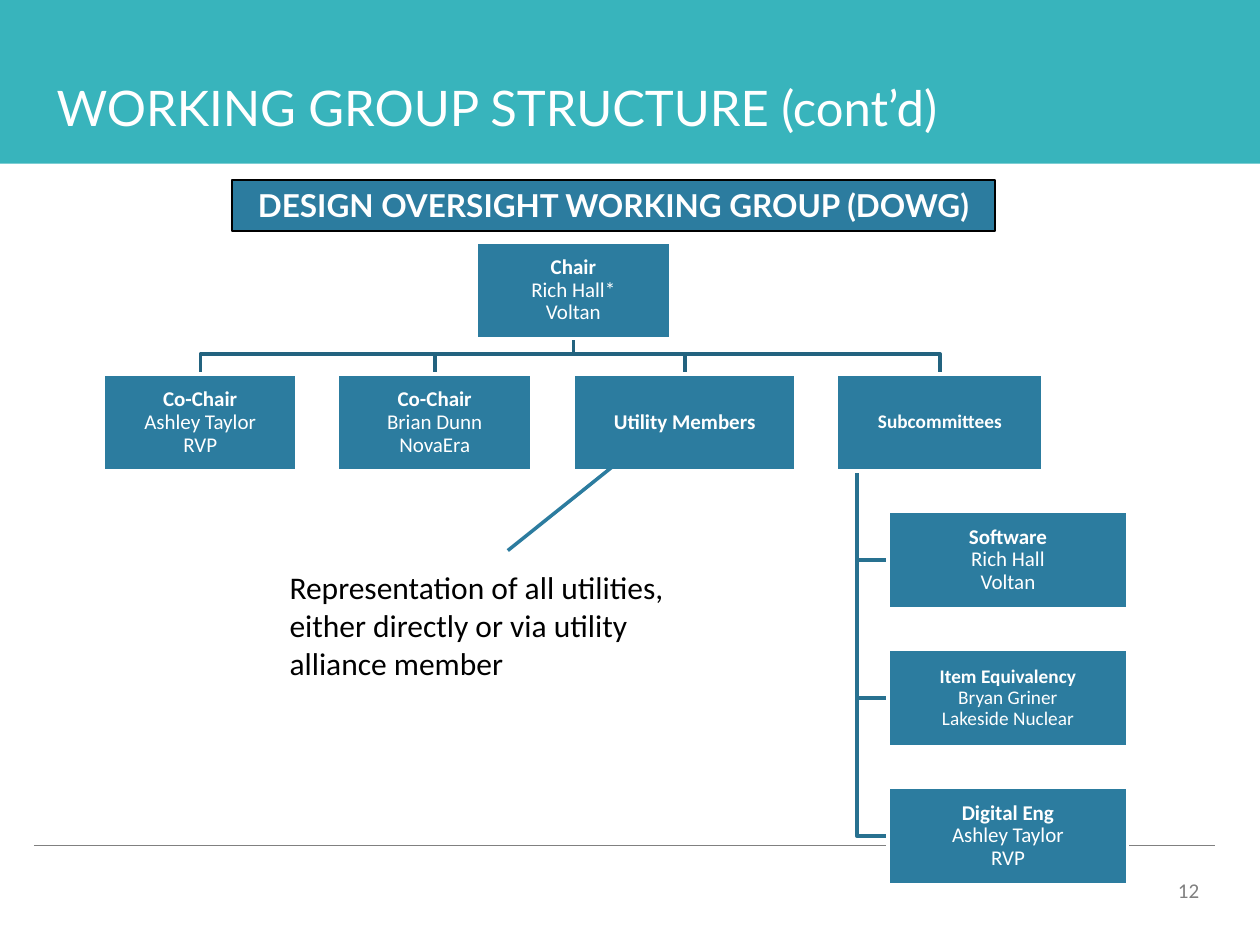
from dataclasses import dataclass

import lxml.etree
import pptx
import pptx.dml.color
import pptx.enum.shapes
import pptx.enum.text
import pptx.oxml.ns
import pptx.util

Pt = pptx.util.Pt
Align = pptx.enum.text.PP_ALIGN
Anchor = pptx.enum.text.MSO_ANCHOR


@dataclass(frozen=True)
class Theme:
    header: str = "38B4BC"
    box: str = "2C7C9F"
    branch: str = "23637F"
    sub_branch: str = "287190"
    white: str = "FFFFFF"
    black: str = "000000"
    gray: str = "808080"
    heading_font: str = "Lato"
    body_font: str = "Calibri"
    title_size: int = 28
    body_size: int = 18
    card_size: int = 12
    small_size: int = 11


THEME = Theme()
CARD_HEIGHT = 55.4
CHAIR = (272.2, 138.2, 110.9, ["Chair", "Rich Hall*", "Voltan"], THEME.card_size)
ROW_TOP = 213.8
ROW = [
    (59, 110.9, ["Co-Chair", "Ashley Taylor", "RVP"], THEME.card_size),
    (193, 110.9, ["Co-Chair", "Brian Dunn", "NovaEra"], THEME.card_size),
    (327.6, 127.4, ["Utility Members"], THEME.card_size),
    (478.1, 118.1, ["Subcommittees"], THEME.small_size),
]
SUB_LEFT, SUB_TOP, SUB_WIDTH, SUB_PITCH = 507.6, 292.3, 136.8, 78.9
SUBCOMMITTEES = [
    (["Software", "Rich Hall", "Voltan"], THEME.card_size),
    (["Item Equivalency", "Bryan Griner", "Lakeside Nuclear"], THEME.small_size),
    (["Digital Eng", "Ashley Taylor", "RVP"], THEME.card_size),
]


def color(code):
    return pptx.dml.color.RGBColor.from_string(code)


def write(shape, lines, *, size, ink, font=THEME.body_font, bold_first=False,
          align=Align.LEFT, anchor=Anchor.TOP, spacing=None, inset=None, wrap=True):
    frame = shape.text_frame
    frame.word_wrap = wrap
    frame.vertical_anchor = anchor
    if inset is not None:
        frame.margin_left = frame.margin_right = Pt(inset)
        frame.margin_top = frame.margin_bottom = Pt(inset)
    for index, line in enumerate(lines):
        para = frame.add_paragraph() if index else frame.paragraphs[0]
        para.alignment = align
        if spacing:
            para.line_spacing = spacing
        span = para.add_run()
        span.text = line
        span.font.name = font
        span.font.size = Pt(size)
        span.font.bold = bold_first and index == 0
        span.font.color.rgb = color(ink)


def add_text(page, left, top, width, height, lines, **style):
    box = page.shapes.add_textbox(Pt(left), Pt(top), Pt(width), Pt(height))
    write(box, lines, **style)


def add_box(page, left, top, width, height, fill, outline=None, weight=1):
    box = page.shapes.add_shape(pptx.enum.shapes.MSO_SHAPE.RECTANGLE,
                                Pt(left), Pt(top), Pt(width), Pt(height))
    box.shadow.inherit = False
    box.fill.solid()
    box.fill.fore_color.rgb = color(fill)
    if outline:
        box.line.color.rgb = color(outline)
        box.line.width = Pt(weight)
    else:
        box.line.fill.background()
    return box


def add_card(page, left, top, width, lines, size):
    card = add_box(page, left, top, width, CARD_HEIGHT, THEME.box, THEME.white, 2)
    write(card, lines, size=size, ink=THEME.white, bold_first=True, align=Align.CENTER,
          anchor=Anchor.MIDDLE, spacing=0.9, inset=0.7)


def add_branch(page, points, ink):
    (x, y), *rest = [(Pt(x), Pt(y)) for x, y in points]
    builder = page.shapes.build_freeform(x, y)
    builder.add_line_segments(rest, close=False)
    branch = builder.convert_to_shape()
    branch.shadow.inherit = False
    branch.fill.background()
    branch.line.color.rgb = color(ink)
    branch.line.width = Pt(2)


def add_line(page, start, end, ink, weight, arrow=False):
    line = page.shapes.add_connector(pptx.enum.shapes.MSO_CONNECTOR.STRAIGHT,
                                     *map(Pt, start + end))
    line.line.color.rgb = color(ink)
    line.line.width = Pt(weight)
    qn = pptx.oxml.ns.qn
    properties = line.element.find(qn("p:spPr"))
    if arrow:
        outline = properties.find(qn("a:ln"))
        lxml.etree.SubElement(outline, qn("a:tailEnd"), type="arrow")
    lxml.etree.SubElement(properties, qn("a:effectLst"))


def add_frame(page):
    add_box(page, 0, 0, 720, 93.6, THEME.header)
    add_text(page, 666, 498.2, 49.7, 21.6, ["12"], size=THEME.card_size, ink=THEME.gray)
    add_line(page, (19.4, 483.1), (694.1, 483.1), THEME.gray, 0.25)
    add_text(page, 32.4, 44.6, 641.5, 25.9, ["WORKING GROUP STRUCTURE (cont’d)"],
             size=THEME.title_size, ink=THEME.white, font=THEME.heading_font,
             inset=0, wrap=False)


def add_chart_of_roles(page):
    sub_tops = [SUB_TOP + SUB_PITCH * index for index in range(len(SUBCOMMITTEES))]
    trunk, row_bottom = 489.6, ROW_TOP + CARD_HEIGHT
    for top in reversed(sub_tops):
        middle = top + CARD_HEIGHT / 2
        add_branch(page, [(trunk, row_bottom), (trunk, middle), (SUB_LEFT, middle)],
                   THEME.sub_branch)

    chair_left, chair_top, chair_width, chair_lines, chair_size = CHAIR
    chair_center, chair_bottom = chair_left + chair_width / 2, chair_top + CARD_HEIGHT
    bus = 202.3
    for left, width, _, _ in reversed(ROW):
        center = left + width / 2
        add_branch(page, [(chair_center, chair_bottom), (chair_center, bus),
                          (center, bus), (center, ROW_TOP)], THEME.branch)

    add_card(page, chair_left, chair_top, chair_width, chair_lines, chair_size)
    for left, width, lines, size in ROW:
        add_card(page, left, ROW_TOP, width, lines, size)
    for top, (lines, size) in zip(sub_tops, SUBCOMMITTEES):
        add_card(page, SUB_LEFT, top, SUB_WIDTH, lines, size)


def add_member_note(page):
    add_text(page, 158.4, 321.1, 242.6, 72.7,
             ["Representation of all utilities, either directly or via utility alliance member"],
             size=THEME.body_size, ink=THEME.black)
    add_line(page, (290.2, 314.6), (373.7, 247.7), THEME.box, 2, arrow=True)


def add_banner(page):
    banner = add_box(page, 132.5, 103, 436.3, 29.1, THEME.box, THEME.black)
    write(banner, ["DESIGN OVERSIGHT WORKING GROUP (DOWG)"], size=THEME.body_size,
          ink=THEME.white, font=THEME.heading_font, bold_first=True, align=Align.CENTER)


def main():
    deck = pptx.Presentation()
    deck.slide_width, deck.slide_height = Pt(720), Pt(540)
    page = deck.slides.add_slide(deck.slide_layouts[6])
    add_frame(page)
    add_chart_of_roles(page)
    add_member_note(page)
    add_banner(page)
    deck.save("out.pptx")


if __name__ == "__main__":
    main()
